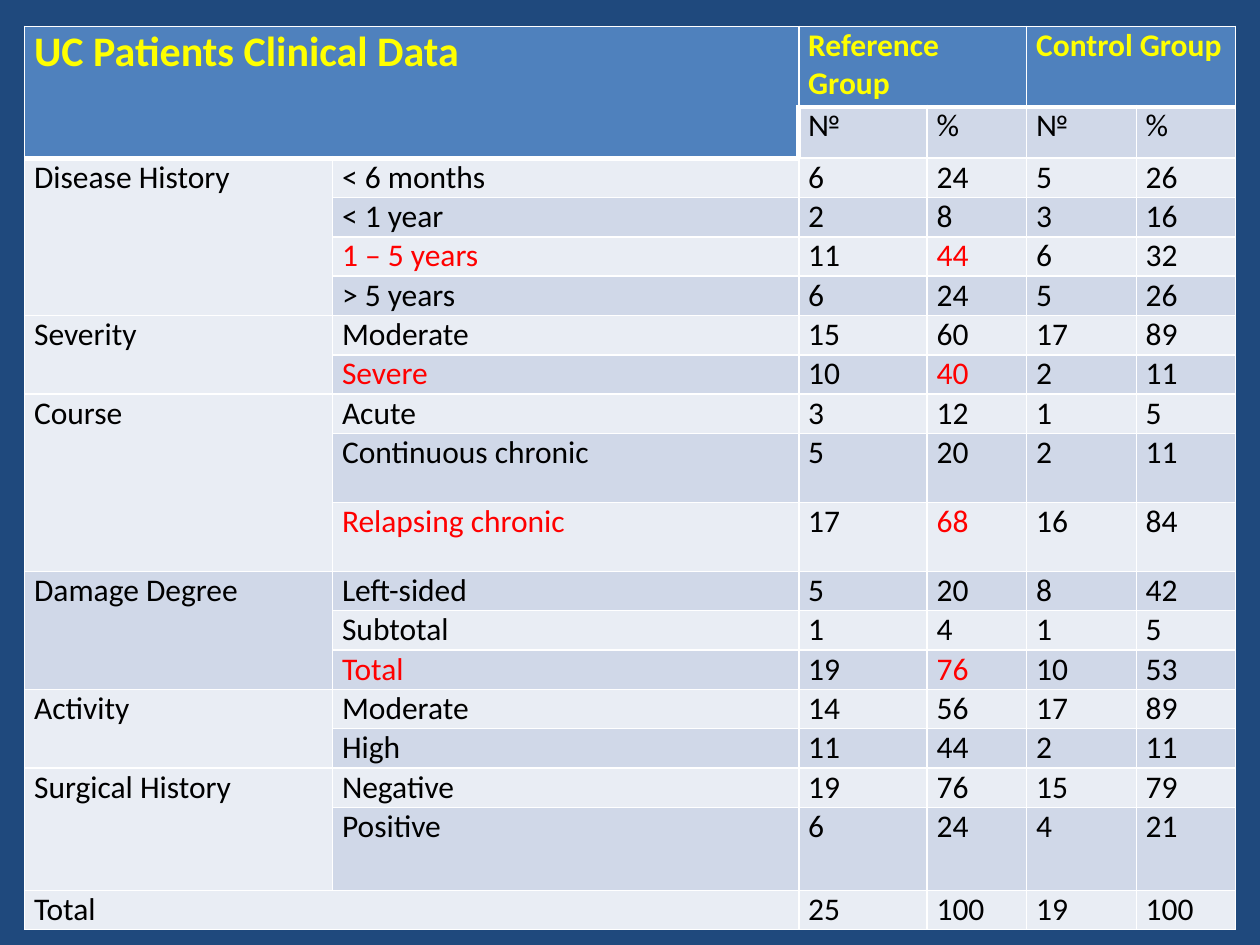
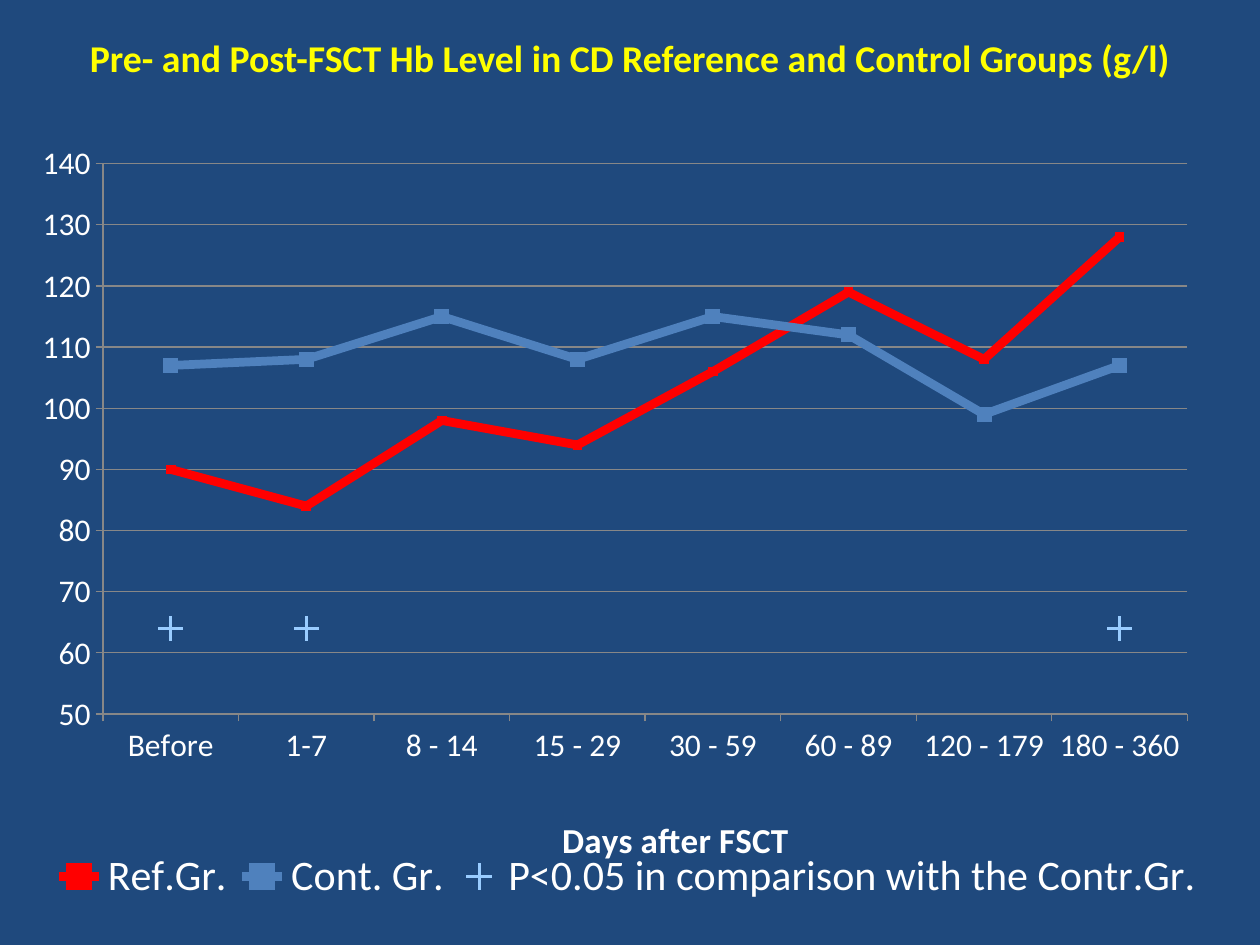
from pptx import Presentation
from pptx.chart.data import CategoryChartData
from pptx.dml.color import RGBColor
from pptx.enum.chart import XL_CHART_TYPE as CT, XL_LEGEND_POSITION as LP
from pptx.enum.chart import XL_MARKER_STYLE as MS, XL_TICK_MARK as TM
from pptx.enum.text import MSO_ANCHOR, PP_ALIGN
from pptx.oxml import parse_xml
from pptx.oxml.ns import nsdecls, qn
from pptx.util import Pt

NAVY = RGBColor(0x1F, 0x49, 0x7D)
BLUE = RGBColor(0x4F, 0x81, 0xBD)
SKY = RGBColor(0x99, 0xCC, 0xFF)
BAND_DARK = RGBColor(0xD0, 0xD8, 0xE8)
BAND_LIGHT = RGBColor(0xE9, 0xED, 0xF4)
YELLOW = RGBColor(0xFF, 0xFF, 0x00)
RED = RGBColor(0xFF, 0x00, 0x00)
WHITE = RGBColor(0xFF, 0xFF, 0xFF)
BLACK = RGBColor(0x00, 0x00, 0x00)
GRAY = RGBColor(0x87, 0x87, 0x87)

FONT = "Calibri"
HEADING = {"bold": True, "name": FONT}
BODY = {"size": Pt(18), "bold": False, "name": FONT}
CELL = {"margin_left": Pt(5.4), "margin_right": Pt(5.4),
        "margin_top": 0, "margin_bottom": 0}

COL_WIDTHS = [176, 266.4, 73.4, 56.9, 62.6, 56.6]
ROW_HEIGHT = 22.5
TALL_ROWS = {0: 46, 1: 29.2, 9: 39.4, 10: 39.4, 17: 47.4}
HEADERS = [
    ["UC Patients Clinical Data", "", "Reference Group", "", "Control Group", ""],
    ["", "", "№", "%", "№", "%"],
]
GROUPS = {
    "Disease History": [("< 6 months", 6, 24, 5, 26), ("< 1 year", 2, 8, 3, 16),
                        ("1 – 5 years", 11, 44, 6, 32), ("> 5 years", 6, 24, 5, 26)],
    "Severity": [("Moderate", 15, 60, 17, 89), ("Severe", 10, 40, 2, 11)],
    "Course": [("Acute", 3, 12, 1, 5), ("Continuous chronic", 5, 20, 2, 11),
               ("Relapsing chronic", 17, 68, 16, 84)],
    "Damage Degree": [("Left-sided", 5, 20, 8, 42), ("Subtotal", 1, 4, 1, 5),
                      ("Total", 19, 76, 10, 53)],
    "Activity": [("Moderate", 14, 56, 17, 89), ("High", 11, 44, 2, 11)],
    "Surgical History": [("Negative", 19, 76, 15, 79), ("Positive", 6, 24, 4, 21)],
    "Total": [("", 25, 100, 19, 100)],
}
HIGHLIGHTED = {"1 – 5 years", "Severe", "Relapsing chronic", "Total"}

DAYS = ["Before", "1-7", "8 - 14", "15 - 29", "30 - 59", "60 - 89",
        "120 - 179", "180 - 360"]
HB_LEVELS = {
    "Ref.Gr.": [90, 84, 98, 94, 106, 119, 108, 128],
    "Cont. Gr.": [107, 108, 115, 108, 115, 112, 99, 107],
    "P<0.05 in comparison with the Contr.Gr.": [64, 64] + [None] * 5 + [64],
}
SERIES_STYLES = [(RED, MS.SQUARE, 5, 5), (BLUE, MS.SQUARE, 8, 5), (SKY, MS.PLUS, 14, 0)]


def set_values(obj, values):
    """Set each named attribute of an object."""
    for name, value in values.items():
        setattr(obj, name, value)


def style_font(font, color, values):
    """Give a font its colour and its format values."""
    set_values(font, values)
    font.color.rgb = color


def add_slide(prs):
    """Add a blank slide with the navy background."""
    s = prs.slides.add_slide(prs.slide_layouts[6])
    s.background.fill.solid()
    s.background.fill.fore_color.rgb = NAVY
    return s


def add_title(s, text):
    """Add a centred yellow title."""
    tf = s.shapes.add_textbox(Pt(36), Pt(9.5), Pt(648), Pt(46)).text_frame
    set_values(tf, {"word_wrap": True, "vertical_anchor": MSO_ANCHOR.MIDDLE})
    p = tf.paragraphs[0]
    p.alignment = PP_ALIGN.CENTER
    r = p.add_run()
    r.text = text
    style_font(r.font, YELLOW, {**HEADING, "size": Pt(21.6)})


def set_borders(cell, row, col):
    """Draw white cell borders, thick along the header edge."""
    thick = set()
    if row == 0 or (row == 1 and col < 2):
        thick.add("B")
    if (row == 1 and col > 1) or (row == 2 and col < 2):
        thick.add("T")
    if row == 1 and col == 2:
        thick.add("L")
    for side in "LRTB":
        width = Pt(3 if side in thick else 1)
        cell._tc.get_or_add_tcPr().append(parse_xml(
            f'<a:ln{side} {nsdecls("a")} w="{width}"><a:solidFill>'
            f'<a:srgbClr val="{WHITE}"/></a:solidFill></a:ln{side}>'))


def fill_cell(cell, text, fill, color, values):
    """Write one table cell."""
    set_values(cell, CELL)
    cell.fill.solid()
    cell.fill.fore_color.rgb = fill
    p = cell.text_frame.paragraphs[0]
    if text == "":
        style_font(p.font, color, values)
        return
    r = p.add_run()
    r.text = str(text)
    style_font(r.font, color, values)


def add_clinical_table(s):
    """Add the table of patient groups with merged headings."""
    rows = HEADERS + [["" if i else group, *line] for group, lines in GROUPS.items()
                      for i, line in enumerate(lines)]
    heights = [TALL_ROWS.get(i, ROW_HEIGHT) for i in range(len(rows))]
    table = s.shapes.add_table(len(rows), len(COL_WIDTHS), Pt(14.1), Pt(15.1),
                               Pt(sum(COL_WIDTHS)), Pt(sum(heights))).table
    set_values(table, {"first_row": False, "horz_banding": False})
    for column, width in zip(table.columns, COL_WIDTHS):
        column.width = Pt(width)
    for row, height in zip(table.rows, heights):
        row.height = Pt(height)
    for i, row in enumerate(rows):
        for j, text in enumerate(row):
            cell = table.cell(i, j)
            set_borders(cell, i, j)
            if i == 0 or (i == 1 and j < 2):
                size = Pt(24 if j < 2 else 18)
                fill_cell(cell, text, BLUE, YELLOW, {**HEADING, "size": size})
            else:
                red = row[1] in HIGHLIGHTED and j in (1, 3)
                fill_cell(cell, text, BAND_DARK if i % 2 else BAND_LIGHT,
                          RED if red else BLACK, BODY)
    merge_headings(table, len(rows) - 1)


def merge_headings(table, last):
    """Merge the header, group and total cells."""
    spans = [(0, 0, 1, 1), (0, 2, 0, 3), (0, 4, 0, 5), (last, 0, last, 1)]
    top = len(HEADERS)
    for lines in GROUPS.values():
        if len(lines) > 1:
            spans.append((top, 0, top + len(lines) - 1, 0))
        top += len(lines)
    for top, left, bottom, right in spans:
        table.cell(top, left).merge(table.cell(bottom, right))


def set_layout(element, index, inner=False, **places):
    """Place a chart part by fractions of the chart area."""
    for old in element.findall(qn("c:layout")):
        element.remove(old)
    target = '<c:layoutTarget val="inner"/>' if inner else ""
    modes = "".join(f'<c:{k}Mode val="edge"/>' for k in "xy")
    values = "".join(f'<c:{k} val="{v}"/>' for k, v in places.items())
    element.insert(index, parse_xml(
        f'<c:layout {nsdecls("c")}><c:manualLayout>{target}{modes}{values}'
        '</c:manualLayout></c:layout>'))


def style_series(series, color, marker, size, width):
    """Set the line and marker of one series."""
    series.smooth = False
    set_values(series.marker, {"style": marker, "size": size})
    mark = series.marker.format
    mark.line.color.rgb = color
    if width:
        series.format.line.color.rgb = color
        series.format.line.width = Pt(width)
        mark.fill.solid()
        mark.fill.fore_color.rgb = color
    else:
        series.format.line.fill.background()
        mark.fill.background()


def style_axes(chart):
    """Set the scale, gridlines and axis title."""
    days, level = chart.category_axis, chart.value_axis
    set_values(level, {"minimum_scale": 50, "maximum_scale": 140, "major_unit": 10,
                       "has_major_gridlines": True})
    for axis in (days, level):
        axis.major_tick_mark = TM.OUTSIDE
        axis.format.line.color.rgb = GRAY
    grid = level.major_gridlines.format.line
    grid.color.rgb = GRAY
    grid.width = Pt(0.75)
    r = days.axis_title.text_frame.paragraphs[0].add_run()
    r.text = "Days after FSCT"
    style_font(r.font, WHITE, {**HEADING, "size": Pt(20)})
    set_layout(days.axis_title._element, 1, x=0.44, y=0.86)


def add_hb_chart(s):
    """Add the line chart of haemoglobin levels."""
    data = CategoryChartData()
    data.categories = DAYS
    for name, values in HB_LEVELS.items():
        data.add_series(name, values)
    chart = s.shapes.add_chart(CT.LINE_MARKERS, Pt(18), Pt(75.6), Pt(681),
                               Pt(449.3), data).chart
    set_values(chart, {"has_title": False, "has_legend": True})
    style_font(chart.font, WHITE, BODY)
    chart.plots[0].vary_by_categories = False
    for series, style in zip(chart.plots[0].series, SERIES_STYLES):
        style_series(series, *style)
    style_axes(chart)
    set_values(chart.legend, {"position": LP.BOTTOM, "include_in_layout": False})
    style_font(chart.legend.font, WHITE, {**BODY, "size": Pt(24)})
    set_layout(chart.legend._element, 1, x=0.01, y=0.92, w=0.98, h=0.07)
    plot_area = chart.element.find(".//" + qn("c:plotArea"))
    set_layout(plot_area, 0, inner=True, x=0.06, y=0.04, w=0.91, h=0.7)


def main():
    """Build both slides."""
    prs = Presentation()
    set_values(prs, {"slide_width": Pt(720), "slide_height": Pt(540)})
    add_clinical_table(add_slide(prs))
    s = add_slide(prs)
    add_title(s, "Pre- and Post-FSCT Hb Level in CD Reference and Control Groups (g/l)")
    add_hb_chart(s)
    prs.save("out.pptx")


if __name__ == "__main__":
    main()
